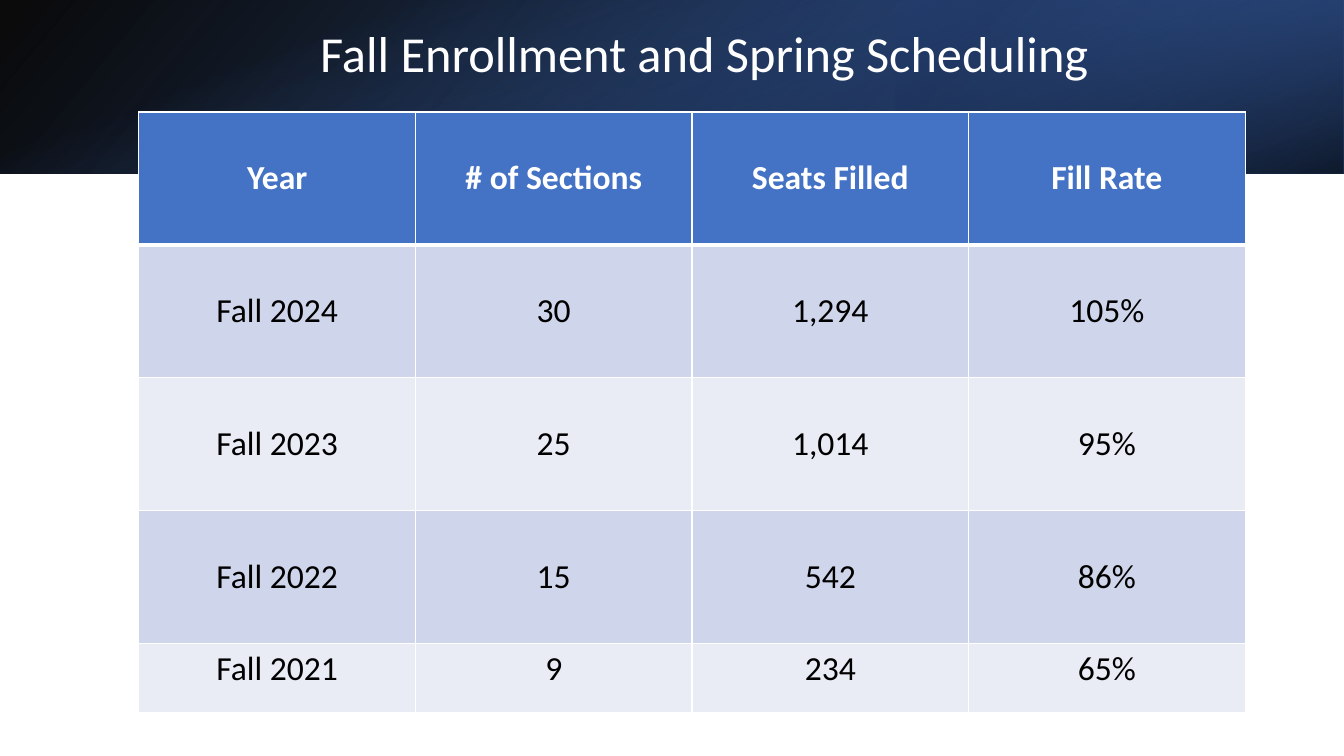
"""Builds a slide with a gradient header and a table of fall enrollment."""
from lxml.etree import SubElement
from pptx import Presentation
from pptx.dml.color import RGBColor
from pptx.enum.shapes import MSO_SHAPE
from pptx.enum.text import MSO_ANCHOR, PP_ALIGN
from pptx.oxml.ns import qn
from pptx.util import Cm, Pt

FONT = "Calibri"
WHITE = RGBColor(0xFF, 0xFF, 0xFF)
BLACK = RGBColor(0x00, 0x00, 0x00)
BLUE = RGBColor(0x44, 0x72, 0xC4)
DARK_BLUE = RGBColor(0x2F, 0x55, 0x97)
NAVY = RGBColor(0x20, 0x38, 0x64)
BAND_DARK = RGBColor(0xCF, 0xD5, 0xEA)
BAND_LIGHT = RGBColor(0xE9, 0xEB, 0xF5)

TITLE = "Fall Enrollment and Spring Scheduling"
ROWS = [
    ("Year", "# of Sections", "Seats Filled", "Fill Rate"),
    ("Fall 2024", "30", "1,294", "105%"),
    ("Fall 2023", "25", "1,014", "95%"),
    ("Fall 2022", "15", "542", "86%"),
    ("Fall 2021", "9", "234", "65%"),
]

PAGE_WIDTH, PAGE_HEIGHT = 33.87, 19.05
HEADER_HEIGHT = 4.37
HALF_OFFSET = (PAGE_WIDTH - HEADER_HEIGHT) / 2
HEADER_LAYERS = [
    {"at": (0, 0, PAGE_WIDTH, HEADER_HEIGHT), "rotation": 0, "flip": True,
     "stops": [(0, BLACK, 96), (100, DARK_BLUE, 100)], "angle": 140},
    {"at": (PAGE_WIDTH * 2 / 3, 0, PAGE_WIDTH / 3, HEADER_HEIGHT), "rotation": 180, "flip": True,
     "stops": [(19, NAVY, 68), (100, BLUE, 79)], "angle": 320},
    {"at": (HALF_OFFSET, -HALF_OFFSET, HEADER_HEIGHT, PAGE_WIDTH), "rotation": 90, "flip": False,
     "stops": [(23, BLUE, 0), (99, BLACK, 74)], "angle": 340},
]
TITLE_AT = (7.82, 0.64, 30.61, 2.44)
TABLE_LEFT, TABLE_TOP = 3.5, 2.82
COLUMN_WIDTH = 6.97
ROW_HEIGHT, LAST_ROW_HEIGHT = 3.35, 1.73


def fill_gradient(shape, stops, angle):
    shape.fill.background()
    properties = shape._element.spPr
    gradient = properties.makeelement(qn("a:gradFill"), {"rotWithShape": "1"})
    properties.replace(properties.find(qn("a:noFill")), gradient)
    stop_list = SubElement(gradient, qn("a:gsLst"))
    for position, color, opacity in stops:
        stop = SubElement(stop_list, qn("a:gs"), pos=str(position * 1000))
        tint = SubElement(stop, qn("a:srgbClr"), val=str(color))
        SubElement(tint, qn("a:alpha"), val=str(opacity * 1000))
    SubElement(gradient, qn("a:lin"), ang=str(angle * 60000), scaled="0")


def add_header_layer(page, layer):
    shape = page.shapes.add_shape(MSO_SHAPE.RECTANGLE, *map(Cm, layer["at"]))
    shape.shadow.inherit = False
    shape.line.fill.background()
    shape.rotation = layer["rotation"]
    if layer["flip"]:
        shape._element.spPr.xfrm.set("flipH", "1")
    fill_gradient(shape, layer["stops"], layer["angle"])


def style_text(para, size, color, bold=False):
    for span in para.runs:
        span.font.name = FONT
        span.font.size = Pt(size)
        span.font.bold = bold
        span.font.color.rgb = color


def add_title(page):
    box = page.shapes.add_textbox(*map(Cm, TITLE_AT))
    frame = box.text_frame
    frame.text = TITLE
    frame.word_wrap = True
    frame.vertical_anchor = MSO_ANCHOR.TOP
    frame.margin_top = Cm(0.1)
    para = frame.paragraphs[0]
    para.line_spacing = 0.9
    style_text(para, 36, WHITE)


def set_borders(cell, widths):
    properties = cell._tc.get_or_add_tcPr()
    for index, (side, width) in enumerate(widths.items()):
        border = properties.makeelement(qn(f"a:{side}"), {"w": str(Pt(width))})
        properties.insert(index, border)
        fill = SubElement(border, qn("a:solidFill"))
        SubElement(fill, qn("a:srgbClr"), val=str(WHITE))


def add_enrollment_table(page):
    heights = [ROW_HEIGHT] * (len(ROWS) - 1) + [LAST_ROW_HEIGHT]
    columns = len(ROWS[0])
    table = page.shapes.add_table(
        len(ROWS), columns, Cm(TABLE_LEFT), Cm(TABLE_TOP),
        Cm(COLUMN_WIDTH * columns), Cm(sum(heights))).table
    for column in table.columns:
        column.width = Cm(COLUMN_WIDTH)
    for index, (values, height) in enumerate(zip(ROWS, heights)):
        table.rows[index].height = Cm(height)
        is_header = index == 0
        is_last = index == len(ROWS) - 1
        band = BLUE if is_header else BAND_DARK if index % 2 else BAND_LIGHT
        widths = {"lnL": 1, "lnR": 1, "lnT": 3 if index == 1 else 1, "lnB": 3 if is_header else 1}
        for cell, value in zip(table.rows[index].cells, values):
            cell.text_frame.text = value
            cell.vertical_anchor = MSO_ANCHOR.TOP if is_last else MSO_ANCHOR.MIDDLE
            cell.fill.solid()
            cell.fill.fore_color.rgb = band
            set_borders(cell, widths)
            para = cell.text_frame.paragraphs[0]
            para.alignment = PP_ALIGN.CENTER
            style_text(para, 24, WHITE if is_header else BLACK, is_header)


def main():
    deck = Presentation()
    deck.slide_width, deck.slide_height = Cm(PAGE_WIDTH), Cm(PAGE_HEIGHT)
    page = deck.slides.add_slide(deck.slide_layouts[6])
    for layer in HEADER_LAYERS:
        add_header_layer(page, layer)
    add_title(page)
    add_enrollment_table(page)
    deck.save("out.pptx")


if __name__ == "__main__":
    main()
